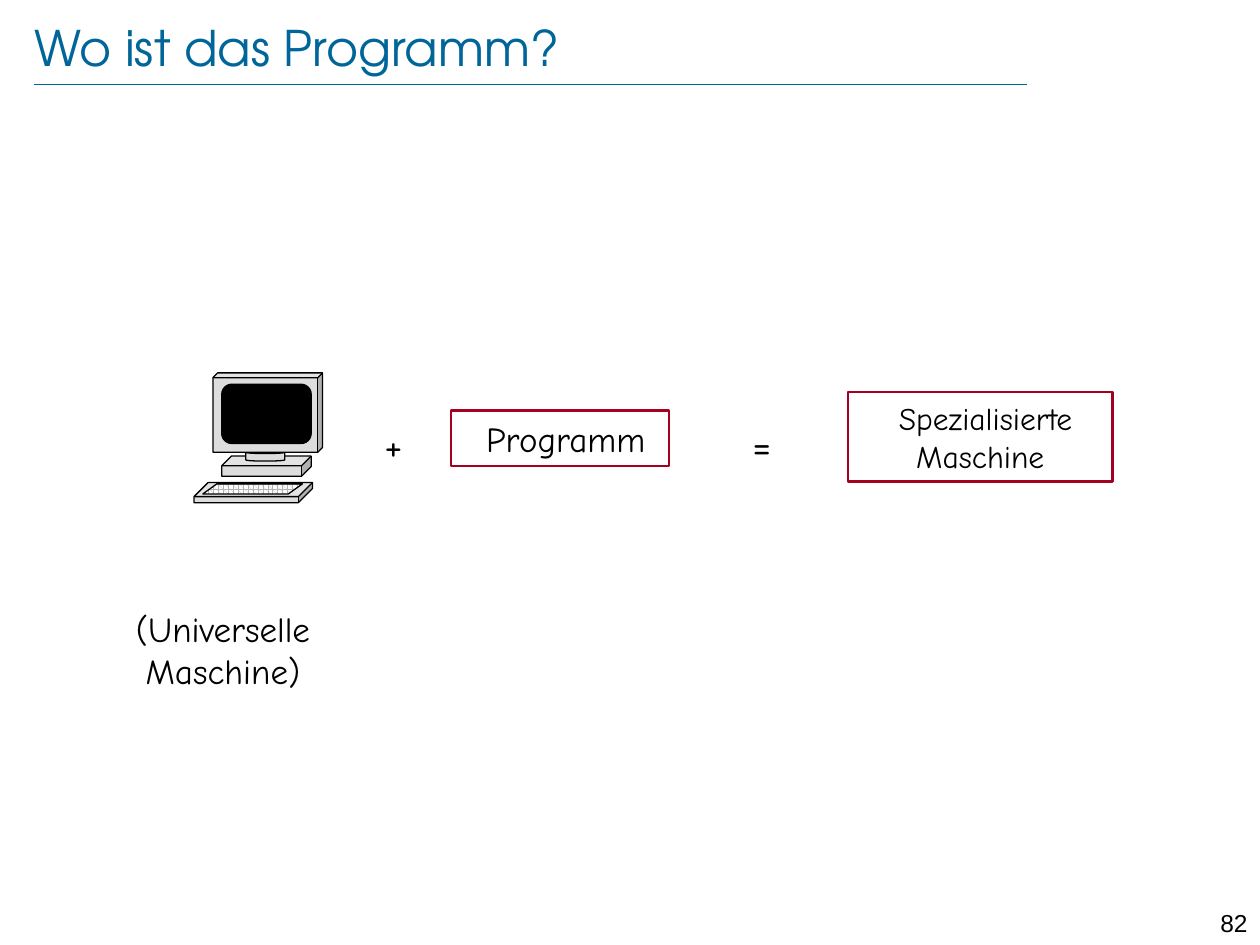
"""Build the slide on where the program is: universal machine + program = specialised machine."""
from lxml import etree
from pptx import Presentation
from pptx.dml.color import RGBColor
from pptx.enum.dml import MSO_PATTERN
from pptx.enum.shapes import MSO_CONNECTOR, MSO_SHAPE
from pptx.enum.text import MSO_ANCHOR, PP_ALIGN
from pptx.oxml.ns import qn
from pptx.util import Inches, Pt

CUBE, CAN, RECT = MSO_SHAPE.CUBE, MSO_SHAPE.CAN, MSO_SHAPE.RECTANGLE
ROUND, SLANTED = MSO_SHAPE.ROUNDED_RECTANGLE, MSO_SHAPE.PARALLELOGRAM
LEFT, CENTER, RIGHT = PP_ALIGN.LEFT, PP_ALIGN.CENTER, PP_ALIGN.RIGHT
TOP, MIDDLE = MSO_ANCHOR.TOP, MSO_ANCHOR.MIDDLE
BLUE, RED, BLACK, GREY = "006699", "A50021", "000000", "DDDDDD"


def paint(fill, color):
    fill.solid()
    fill.fore_color.rgb = RGBColor.from_string(color)


def write(sp, text, size=20, font="Comic Neue", color=BLACK, align=CENTER, anchor=TOP, inset=None):
    tf = sp.text_frame
    tf.word_wrap = True
    tf.vertical_anchor = anchor
    if inset is not None:
        tf.margin_left = tf.margin_right = tf.margin_top = tf.margin_bottom = inset
    p = tf.paragraphs[0]
    p.alignment = align
    r = p.add_run()
    r.text = text
    r.font.size = Pt(size)
    r.font.name = font
    paint(r.font.fill, color)


prs = Presentation()
prs.slide_width, prs.slide_height = Inches(10), Inches(7.5)
col, row = prs.slide_width / 100, prs.slide_height / 75
s = prs.slides.add_slide(prs.slide_layouts[5])

title = s.shapes.title
title.left, title.top = int(2.7 * col), int(1.3 * row)
title.width, title.height = int(86.9 * col), int(4.8 * row)
write(title, "Wo ist das Programm?", size=28, font="TeX Gyre Adventor", color=BLUE,
      align=LEFT, anchor=MIDDLE, inset=0)

rule = s.shapes.add_connector(MSO_CONNECTOR.STRAIGHT, int(2.7 * col), int(6.7 * row),
                              int(81.5 * col), int(6.7 * row))
rule.line.width = Pt(0.25)
paint(rule.line.fill, BLUE)
etree.SubElement(rule._element.spPr, qn("a:effectLst"))

computer = s.shapes.add_group_shape()
for kind, x, y, w, h, adj, color in [
    (CUBE, 17.6, 36.2, 7.1, 1.6, 0.48, GREY),
    (CAN, 19.5, 35.8, 3.1, 0.8, 0.25, GREY),
    (CUBE, 16.9, 29.6, 8.7, 6.3, 0.06, GREY),
    (ROUND, 17.6, 30.5, 7.1, 4.7, 0.17, BLACK),
    (CUBE, 15.4, 38.3, 9.4, 1.6, 0.7, GREY),
    (SLANTED, 16.1, 38.4, 7.9, 0.8, 1.39, None),
]:
    sp = computer.shapes.add_shape(kind, int(x * col), int(y * row), int(w * col), int(h * row))
    sp.shadow.inherit = False
    sp.adjustments[0] = adj
    sp.line.width = Pt(0.75)
    paint(sp.line.fill, BLACK)
    if color:
        paint(sp.fill, color)
    else:
        sp.fill.patterned()
        sp.fill.pattern = MSO_PATTERN.SPHERE
        sp.fill.fore_color.rgb = RGBColor.from_string("B2B2B2")
        sp.fill.back_color.rgb = RGBColor.from_string("FFFFFF")

for text, x, y, w, h, size in [
    (" Programm", 35.8, 32.6, 17.3, 4.4, 20),
    (" Spezialisierte Maschine", 67.3, 31.1, 21, 7.1, 18),
]:
    sp = s.shapes.add_shape(RECT, int(x * col), int(y * row), int(w * col), int(h * row))
    sp.shadow.inherit = False
    sp.fill.background()
    sp.line.width = Pt(1.5)
    paint(sp.line.fill, RED)
    write(sp, text, size=size, anchor=MIDDLE)

for text, x, y, w, h, style in [
    ("(Universelle Maschine)", 4.3, 47.7, 26.8, 7.7, {}),
    ("+", 29.5, 32.7, 3.1, 4, {"size": 24}),
    ("=", 58.7, 32.7, 3.1, 4, {"size": 24}),
    ("82", 94.5, 71.6, 5.5, 2.4, {"size": 14, "font": "Arial", "align": RIGHT}),
]:
    sp = s.shapes.add_textbox(int(x * col), int(y * row), int(w * col), int(h * row))
    write(sp, text, **style)

prs.save("out.pptx")
